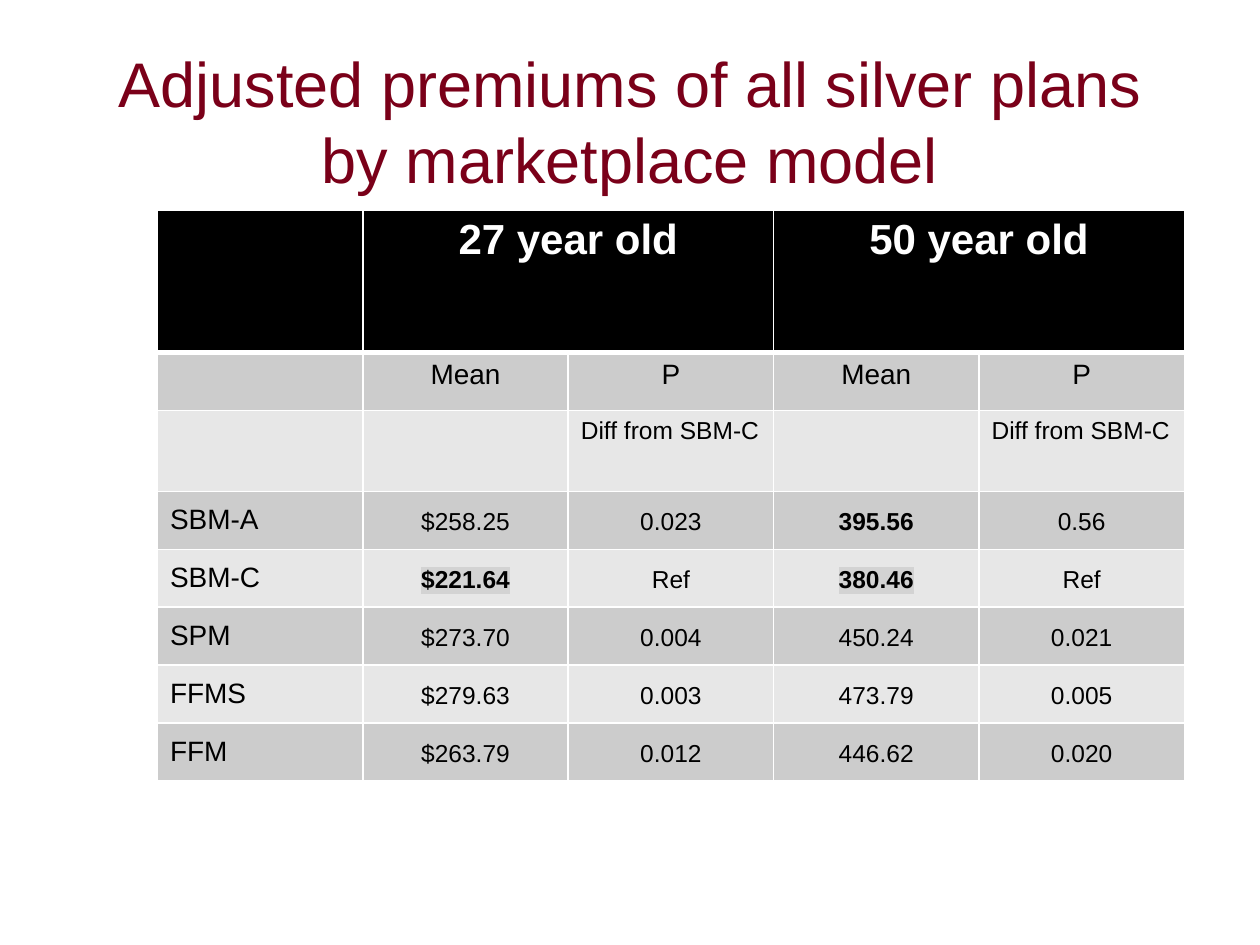
from lxml import etree
from pptx import Presentation
from pptx.dml.color import RGBColor
from pptx.enum import text
from pptx.oxml import ns
from pptx.util import Inches, Pt

COLORS = {
    "title": "7A0019", "header": "000000", "dark": "CCCCCC", "light": "E7E7E7",
    "white": "FFFFFF", "black": "000000", "highlight": "D3D3D3",
}
LEFT, CENTER = text.PP_ALIGN.LEFT, text.PP_ALIGN.CENTER


def write(tf, content, size, color="black", bold=False, align=CENTER,
          spacing=None, highlight=None):
    p = tf.paragraphs[0]
    p.alignment = align
    if spacing:
        p.line_spacing = spacing
    r = p.add_run()
    r.text = content
    r.font.size = Pt(size)
    r.font.bold = bold
    r.font.color.rgb = RGBColor.from_string(COLORS[color])
    if highlight:
        mark = etree.SubElement(r.font._element, ns.qn("a:highlight"))
        etree.SubElement(mark, ns.qn("a:srgbClr"), val=COLORS[highlight])
    r.font.name = "Arial"


def style_cell(cell, fill, bottom):
    """Draw white borders (bottom width in points) and fill the cell."""
    tc_pr = cell._tc.get_or_add_tcPr()
    for side, width in (("L", 1), ("R", 1), ("T", 1), ("B", bottom)):
        ln = etree.SubElement(tc_pr, ns.qn(f"a:ln{side}"), w=str(Pt(width)))
        solid = etree.SubElement(ln, ns.qn("a:solidFill"))
        etree.SubElement(solid, ns.qn("a:srgbClr"), val=COLORS["white"])
    cell.fill.solid()
    cell.fill.fore_color.rgb = RGBColor.from_string(COLORS[fill])


prs = Presentation()
prs.slide_width, prs.slide_height = Inches(10), Inches(7.5)
s = prs.slides.add_slide(prs.slide_layouts[5])

title = s.shapes.title
title.left, title.top = Inches(0.75), Inches(0.33)
title.width, title.height = Inches(8.5), Inches(1.25)
title.text_frame.vertical_anchor = text.MSO_ANCHOR.MIDDLE
write(title.text_frame, "Adjusted premiums of all silver plans by marketplace model",
      36, color="title")

rows = [
    ["", "27 year old", "", "50 year old", ""],
    ["", "Mean", "P", "Mean", "P"],
    ["", "", "Diff from SBM-C", "", "Diff from SBM-C"],
    ["SBM-A", "$258.25", "0.023", "395.56", "0.56"],
    ["SBM-C", "$221.64", "Ref", "380.46", "Ref"],
    ["SPM", "$273.70", "0.004", "450.24", "0.021"],
    ["FFMS", "$279.63", "0.003", "473.79", "0.005"],
    ["FFM", "$263.79", "0.012", "446.62", "0.020"],
]
heights = [1.13, 0.46, 0.64] + [0.46] * 5
bold_values = {"395.56", "$221.64", "380.46"}
highlighted = {"$221.64", "380.46"}

table = s.shapes.add_table(len(rows), 5, Inches(1.25), Inches(1.67),
                           Inches(8.17), Inches(sum(heights))).table
for column in table.columns:
    column.width = Inches(1.63)
for row, height in zip(table.rows, heights):
    row.height = Inches(height)
for col in (1, 3):
    table.cell(0, col).merge(table.cell(0, col + 1))

for i, values in enumerate(rows):
    fill = "header" if i == 0 else "dark" if i % 2 else "light"
    for j, value in enumerate(values):
        cell = table.cell(i, j)
        style_cell(cell, fill, bottom=3 if i == 0 else 1)
        if i >= 3:
            cell.vertical_anchor = text.MSO_ANCHOR.MIDDLE
        if not value:
            continue
        if i == 0:
            write(cell.text_frame, value, 24, color="white", bold=True)
        elif i == 1:
            write(cell.text_frame, value, 16)
        elif i == 2:
            write(cell.text_frame, value, 14, align=LEFT)
        elif j == 0:
            write(cell.text_frame, value, 16, align=LEFT)
        else:
            cell.margin_left = cell.margin_right = Inches(0.07)
            cell.margin_top = cell.margin_bottom = 0
            write(cell.text_frame, value, 14, bold=value in bold_values, spacing=1.15,
                  highlight="highlight" if value in highlighted else None)

prs.save("out.pptx")
